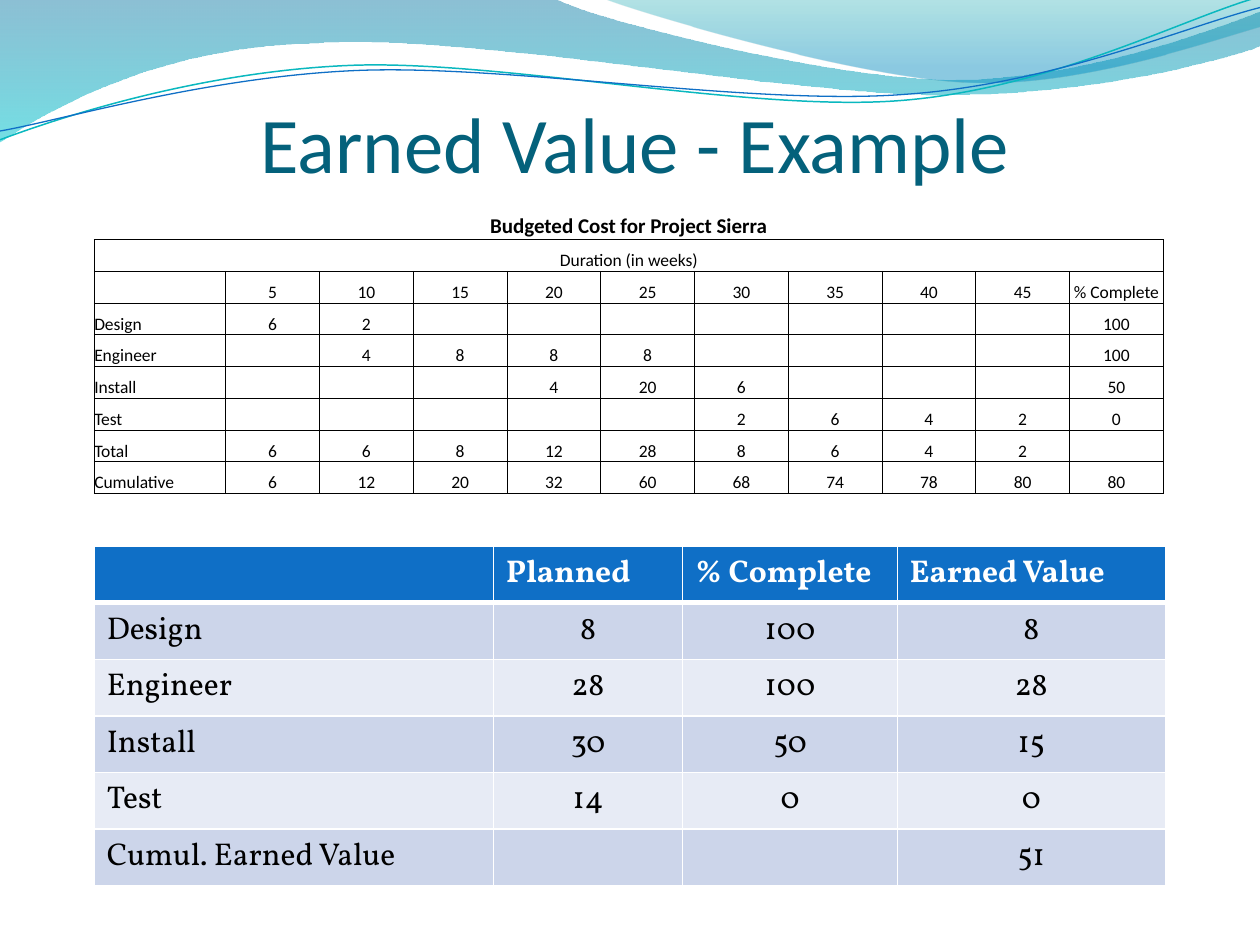
from lxml.etree import SubElement
from pptx import Presentation
from pptx.dml.color import RGBColor
from pptx.enum.text import MSO_ANCHOR, PP_ALIGN
from pptx.oxml.ns import qn
from pptx.util import Cm, Pt

BLACK = RGBColor(0x00, 0x00, 0x00)
WHITE = RGBColor(0xFF, 0xFF, 0xFF)
TITLE_TEAL = RGBColor(0x04, 0x61, 0x7B)
BLUE = RGBColor(0x0F, 0x6F, 0xC6)
TEAL = RGBColor(0x0A, 0xB8, 0xBF)
BAND_DARK = RGBColor(0xCC, 0xD5, 0xEA)
BAND_LIGHT = RGBColor(0xE7, 0xEB, 0xF5)
WAVE_BLUE = RGBColor(0x00, 0x74, 0xA1)
WAVE_CYAN = RGBColor(0x00, 0xC6, 0xCF)
WAVE_GREEN = RGBColor(0x00, 0xA1, 0xA9)
WAVE_SKY = RGBColor(0x00, 0x8B, 0xBF)

TITLE = "Earned Value - Example"
BUDGET = [
    ["Budgeted Cost for Project Sierra"],
    ["Duration (in weeks)"],
    ["", 5, 10, 15, 20, 25, 30, 35, 40, 45, "% Complete"],
    ["Design", 6, 2, "", "", "", "", "", "", "", 100],
    ["Engineer", "", 4, 8, 8, 8, "", "", "", "", 100],
    ["Install", "", "", "", 4, 20, 6, "", "", "", 50],
    ["Test", "", "", "", "", "", 2, 6, 4, 2, 0],
    ["Total", 6, 6, 8, 12, 28, 8, 6, 4, 2, ""],
    ["Cumulative", 6, 12, 20, 32, 60, 68, 74, 78, 80, 80],
]
EARNED = [
    ["", "Planned", "% Complete", "Earned Value"],
    ["Design", 8, 100, 8],
    ["Engineer", 28, 100, 28],
    ["Install", 30, 50, 15],
    ["Test", 14, 0, 0],
    ["Cumul. Earned Value", "", "", 51],
]

# Outlines in inches: a start point, then line ends (2 numbers) or Bézier curves (6 numbers).
# Gradient stops: position, colour, opacity in percent.
WAVES = [
    ([(0, 0), (4.4, -0.01), (4.76, 0.17, 6.64, 0.63, 7.58, 0.63),
      (8.53, 0.63, 9.58, 0.26, 10, 0.09), (10.01, 0.36),
      (9.83, 0.44, 8.7, 0.76, 7.46, 0.75), (6.22, 0.75, 3.82, 0.28, 2.57, 0.34),
      (1.29, 0.36, 0.46, 0.83, -0.01, 1.13), (0, 0)],
     [(0, WAVE_BLUE, 45), (1, WAVE_CYAN, 55)]),
    ([(4.79, -0.01), (5.09, 0.11, 6.82, 0.62, 7.69, 0.65),
      (8.56, 0.69, 9.61, 0.32, 10, 0.21), (10, 0), (4.79, -0.01)],
     [(0, WAVE_GREEN, 30), (0.8, WAVE_SKY, 45)]),
]
RIPPLES = [
    ([(0, 1.11), (0.48, 0.93, 1.58, 0.57, 2.77, 0.52),
      (3.95, 0.47, 5.93, 0.89, 7.13, 0.8), (8.33, 0.71, 9.38, 0.15, 9.98, -0.02)], TEAL, 0.85),
    ([(0, 1.04), (0.47, 0.96, 1.64, 0.61, 2.83, 0.56),
      (4.03, 0.51, 5.97, 0.84, 7.17, 0.75), (8.36, 0.67, 9.41, 0.21, 10, 0.06)], BLUE, 0.75),
]


def add_outline(slide, outline, close):
    """Build the outline from its end points, then bend the segments that are curves."""
    segments = [[Cm(v * 2.54) for v in seg] for seg in outline]
    builder = slide.shapes.build_freeform(*segments[0])
    builder.add_line_segments([seg[-2:] for seg in segments[1:]], close=close)
    sp = builder.convert_to_shape()
    sp.shadow.inherit = False
    lines = list(sp._element.spPr.iter(qn("a:lnTo")))
    for line, seg in zip(lines, segments[1:]):
        if len(seg) == 6:
            curve = line.makeelement(qn("a:cubicBezTo"))
            for x, y in zip(seg[::2], seg[1::2]):
                SubElement(curve, qn("a:pt"), x=str(x - sp.left), y=str(y - sp.top))
            line.getparent().replace(line, curve)
    return sp


def add_wave(slide, outline, stops):
    sp = add_outline(slide, outline, True)
    sp.line.fill.background()
    sp.fill.gradient()
    sp.fill.gradient_angle = 270
    for stop, (position, color, _) in zip(sp.fill.gradient_stops, stops):
        stop.position = position
        stop.color.rgb = color
    for clr, (_, _, opacity) in zip(sp._element.spPr.iter(qn("a:srgbClr")), stops):
        SubElement(clr, qn("a:alpha"), val=str(opacity * 1000))


def add_ripple(slide, outline, color, width):
    sp = add_outline(slide, outline, False)
    sp.fill.background()
    sp.line.color.rgb = color
    sp.line.width = Pt(width)


def set_borders(cell, color, **widths):
    tc_pr = cell._tc.get_or_add_tcPr()
    for side in "LRTB":
        if side in widths:
            ln = SubElement(tc_pr, qn("a:ln" + side), w=str(Pt(widths[side])))
            fill = SubElement(ln, qn("a:solidFill"))
            SubElement(fill, qn("a:srgbClr"), val=str(color))


def set_text(cell, text, font, size, color, bold, align):
    cell.text = str(text)
    p = cell.text_frame.paragraphs[0]
    p.alignment = align
    p.font.name, p.font.size, p.font.bold = font, Pt(size), bold
    p.font.color.rgb = color
    if text == "":
        SubElement(p._p, qn("a:endParaRPr"), sz=str(size * 100))


def add_grid(slide, top, widths, heights):
    table = slide.shapes.add_table(len(heights), len(widths), Cm(1.9), Cm(top),
                                   Cm(sum(widths)), Cm(sum(heights))).table
    table.first_row = table.horz_banding = False
    for column, width in zip(table.columns, widths):
        column.width = Cm(width)
    for row, height in zip(table.rows, heights):
        row.height = Cm(height)
    return table


def add_budget_table(slide):
    table = add_grid(slide, 4.01, [2.65] + [1.89] * 10, [0.82] + [0.64] * 8)
    for r, row in enumerate(BUDGET):
        if len(row) == 1:
            table.cell(r, 0).merge(table.cell(r, 10))
        for c in range(11):
            cell = table.cell(r, c)
            edges = "LRTB" if r else "B"
            set_borders(cell, BLACK, **{side: 0.5 for side in edges})
            cell.fill.background()
            cell.vertical_anchor = MSO_ANCHOR.BOTTOM
            cell.margin_left = cell.margin_right = cell.margin_top = cell.margin_bottom = 0
            if c < len(row):
                align = PP_ALIGN.LEFT if c == 0 and r > 2 else PP_ALIGN.CENTER
                set_text(cell, row[c], "Calibri", 10 if r else 12, BLACK, r == 0, align)


def add_earned_table(slide):
    table = add_grid(slide, 11.01, [8.05, 3.81, 4.33, 5.4], [1.04] * 6)
    for r, row in enumerate(EARNED):
        for c, text in enumerate(row):
            cell = table.cell(r, c)
            set_borders(cell, WHITE, L=1, R=1, T=3 if r == 1 else 1, B=1 if r else 3)
            cell.fill.solid()
            cell.fill.fore_color.rgb = (BAND_DARK if r % 2 else BAND_LIGHT) if r else BLUE
            align = PP_ALIGN.CENTER if r and c else PP_ALIGN.LEFT
            set_text(cell, text, "Vollkorn", 18, BLACK if r else WHITE, r == 0, align)


def add_title(slide):
    title = slide.shapes.title
    slide.shapes._spTree.append(title._element)  # in front of the waves
    title.left, title.top, title.width, title.height = Cm(1.27), Cm(1.96), Cm(23.06), Cm(1.85)
    tf = title.text_frame
    tf.text = TITLE
    tf.vertical_anchor = MSO_ANCHOR.BOTTOM
    tf.margin_left = tf.margin_right = tf.margin_bottom = 0
    p = tf.paragraphs[0]
    p.alignment = PP_ALIGN.CENTER
    p.font.name, p.font.size = "Calibri", Pt(45)
    p.font.color.rgb = TITLE_TEAL


def main():
    prs = Presentation()
    prs.slide_width, prs.slide_height = Cm(25.4), Cm(19.05)
    slide = prs.slides.add_slide(prs.slide_layouts[5])
    for wave in WAVES:
        add_wave(slide, *wave)
    for ripple in RIPPLES:
        add_ripple(slide, *ripple)
    add_title(slide)
    add_budget_table(slide)
    add_earned_table(slide)
    prs.save("out.pptx")


if __name__ == "__main__":
    main()
